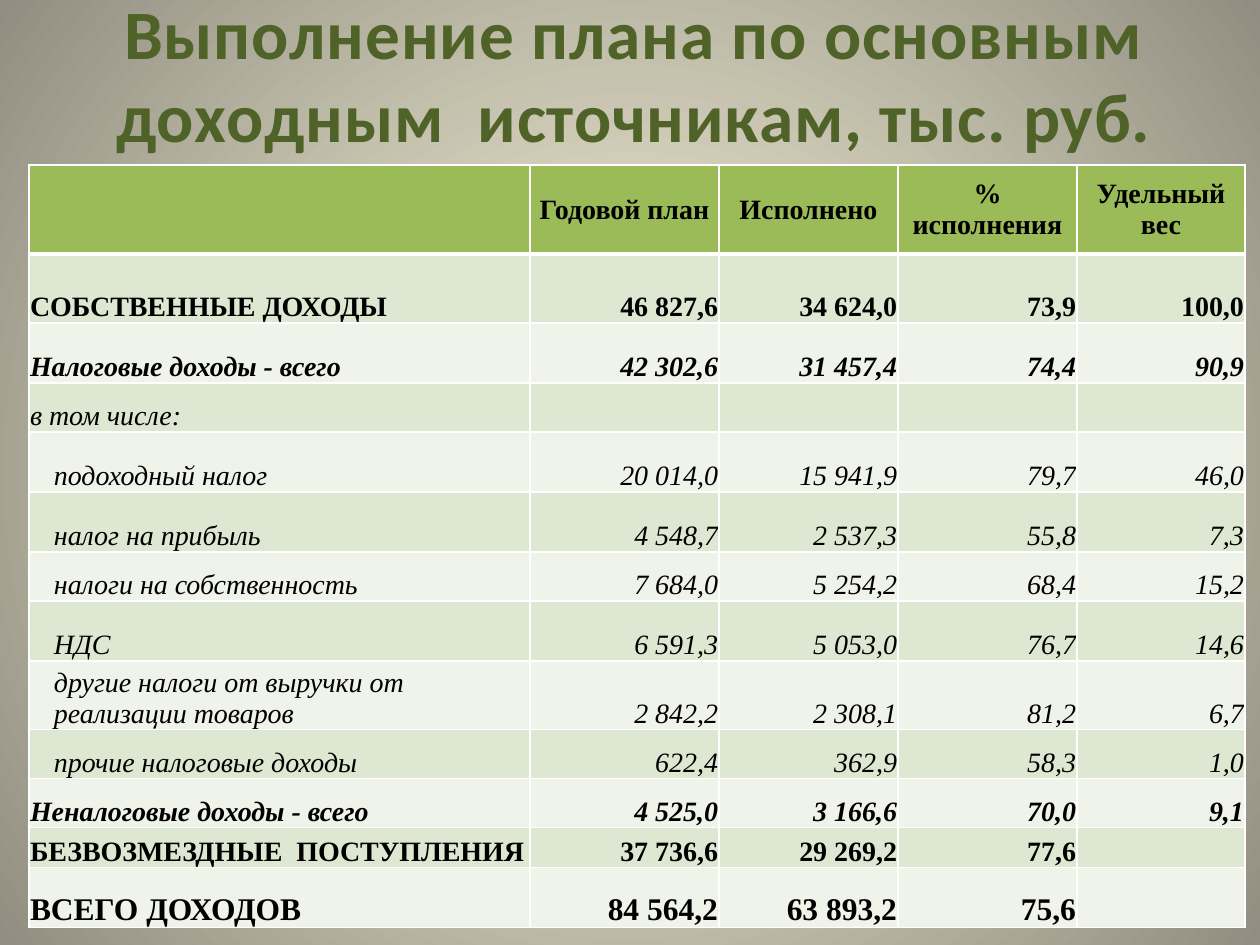
"""Build a slide with a table of budget revenue against the annual plan."""
from lxml import etree
from pptx import Presentation
from pptx import util as u
from pptx.dml.color import RGBColor
from pptx.enum import text
from pptx.oxml import ns

SCALE = 914400 / 126


def px(length):
    return u.Emu(round(length * SCALE))


def color(value):
    return RGBColor.from_string(value)


deck = Presentation()
deck.slide_width, deck.slide_height = px(1260), px(945)
page = deck.slides.add_slide(deck.slide_layouts[5])

backdrop = page.background.fill
backdrop.gradient()
for stop, shade, position in zip(backdrop.gradient_stops, ("FCF7DD", "918E81"), (0, 1)):
    stop.color.rgb = color(shade)
    stop.position = position
gradient = page.background._cSld.find(".//" + ns.qn("a:gradFill"))
gradient.remove(gradient.find(ns.qn("a:lin")))
path = etree.SubElement(gradient, ns.qn("a:path"), path="circle")
etree.SubElement(path, ns.qn("a:fillToRect"), l="50000", t="50000", r="50000", b="50000")

title = page.shapes.title
title.left, title.top, title.width, title.height = px(29), px(0), px(1211), px(147)
frame = title.text_frame
frame.auto_size = text.MSO_AUTO_SIZE.NONE
frame.vertical_anchor = text.MSO_ANCHOR.MIDDLE
para = frame.paragraphs[0]
para.alignment = text.PP_ALIGN.CENTER
span = para.add_run()
span.text = "Выполнение плана по основным доходным  источникам, тыс. руб."
span.font.name, span.font.size, span.font.bold = "Calibri", u.Pt(39.6), True
span.font.color.rgb = color("4F6228")
span.font._element.set("spc", "50")

rows = [
    (89, "header", ["", "Годовой план", "Исполнено", "% исполнения", "Удельный вес"]),
    (69, "bold", ["СОБСТВЕННЫЕ ДОХОДЫ", "46 827,6", "34 624,0", "73,9", "100,0"]),
    (60, "bold italic", ["Налоговые доходы - всего", "42 302,6", "31 457,4", "74,4", "90,9"]),
    (49, "italic", ["в том числе:", "", "", "", ""]),
    (60, "italic indent", ["подоходный налог", "20 014,0", "15 941,9", "79,7", "46,0"]),
    (60, "italic indent", ["налог на прибыль", "4 548,7", "2 537,3", "55,8", "7,3"]),
    (49, "italic indent", ["налоги на собственность", "7 684,0", "5 254,2", "68,4", "15,2"]),
    (60, "italic indent", ["НДС", "6 591,3", "5 053,0", "76,7", "14,6"]),
    (69, "italic indent", ["другие налоги от выручки от реализации товаров",
                           "2 842,2", "2 308,1", "81,2", "6,7"]),
    (49, "italic indent", ["прочие налоговые доходы", "622,4", "362,9", "58,3", "1,0"]),
    (49, "bold italic", ["Неналоговые доходы - всего", "4 525,0", "3 166,6", "70,0", "9,1"]),
    (40, "bold", ["БЕЗВОЗМЕЗДНЫЕ  ПОСТУПЛЕНИЯ", "37 736,6", "29 269,2", "77,6", ""]),
    (60, "bold total", ["ВСЕГО ДОХОДОВ", "84 564,2", "63 893,2", "75,6", ""]),
]
widths = [501, 189, 179, 179, 168]
heights = [height for height, _, _ in rows]
table = page.shapes.add_table(len(rows), len(widths), px(29), px(165),
                              px(sum(widths)), px(sum(heights))).table
for column, width in zip(table.columns, widths):
    column.width = px(width)

for r, (height, style, values) in enumerate(rows):
    table.rows[r].height = px(height)
    header = style == "header"
    for c, value in enumerate(values):
        cell = table.cell(r, c)
        cell.margin_left = px(25 if "indent" in style and c == 0 else 1)
        cell.margin_top = cell.margin_right = px(1)
        cell.margin_bottom = 0
        cell.vertical_anchor = text.MSO_ANCHOR.MIDDLE if header else text.MSO_ANCHOR.BOTTOM
        for side in ("lnL", "lnR", "lnT", "lnB"):
            thick = (r, side) in ((0, "lnB"), (1, "lnT"))
            border = etree.SubElement(cell._tc.get_or_add_tcPr(), ns.qn("a:" + side),
                                      w=str(u.Pt(3 if thick else 1)))
            paint = etree.SubElement(border, ns.qn("a:solidFill"))
            etree.SubElement(paint, ns.qn("a:srgbClr"), val="FFFFFF")
        cell.fill.solid()
        cell.fill.fore_color.rgb = color("9BBB59" if header else ("EFF3EA", "DEE7D1")[r % 2])
        para = cell.text_frame.paragraphs[0]
        if not value:
            etree.SubElement(para._p, ns.qn("a:endParaRPr"), sz="1600")
            continue
        if header:
            para.alignment = text.PP_ALIGN.CENTER
        else:
            para.alignment = text.PP_ALIGN.RIGHT if c else text.PP_ALIGN.LEFT
        span = para.add_run()
        span.text = value
        span.font.name = "Times New Roman"
        span.font.size = u.Pt(18 if "total" in style else 16)
        span.font.bold = header or "bold" in style
        span.font.italic = "italic" in style
        span.font.color.rgb = color("000000")

deck.save("out.pptx")
